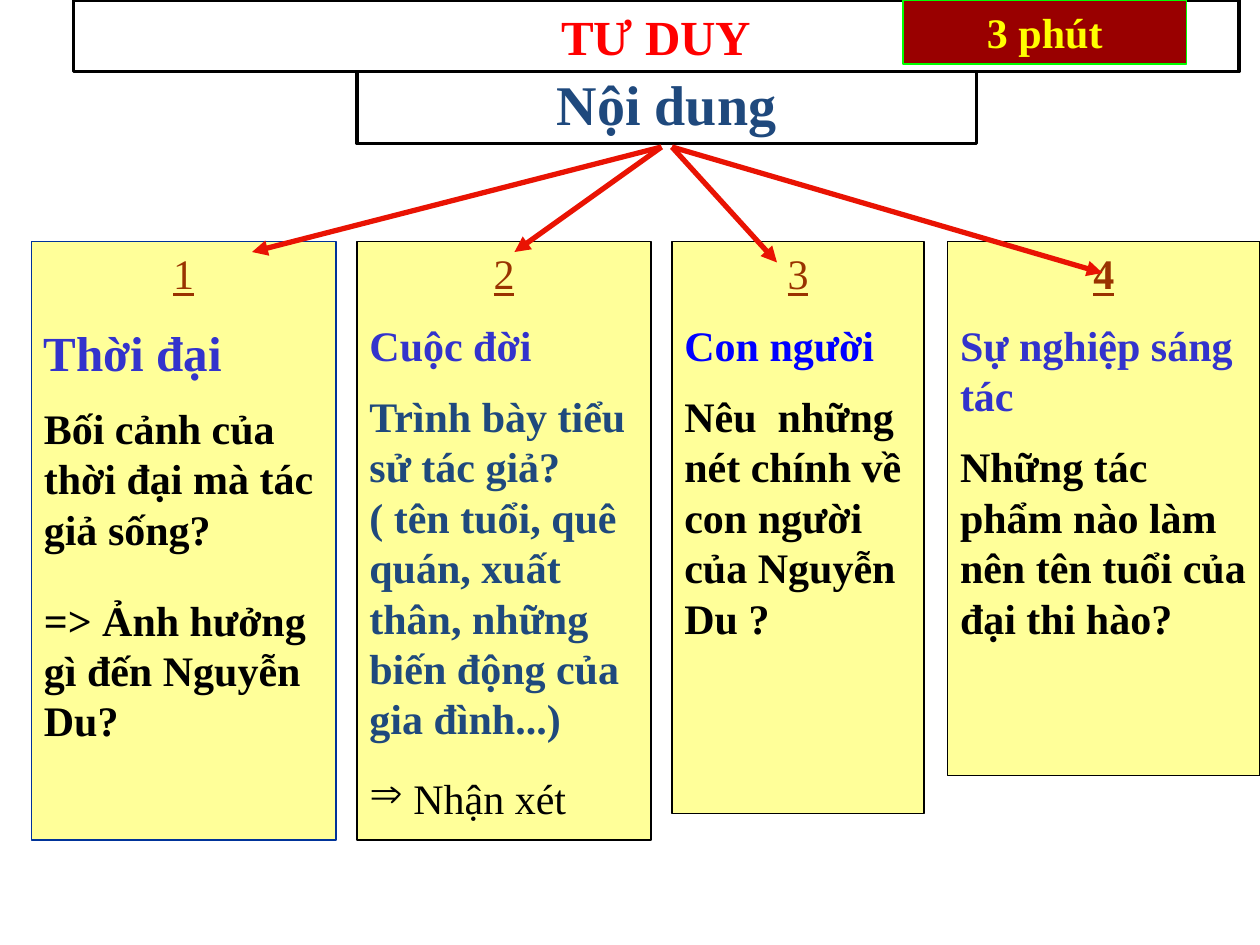
from lxml.etree import SubElement
from pptx import Presentation
from pptx.dml.color import RGBColor
from pptx.enum.shapes import MSO_CONNECTOR, MSO_SHAPE
from pptx.enum.text import MSO_ANCHOR, PP_ALIGN
from pptx.oxml.ns import qn
from pptx.util import Pt

THEME = {
    "font": "Times New Roman",
    "body": 24, "heading": 28, "subject": 32,
    "black": "000000", "white": "FFFFFF", "panel": "FFFF99",
    "number": "993300", "violet": "3333CC", "blue": "0000FF",
    "navy": "1F497D", "edge": "003399", "red": "FF0000",
    "arrow": "E91303", "timer": "990000", "lime": "00FF00", "yellow": "FFFF00",
}
COLUMN_TOP = 138

# left, width, height, edge colour, number is bold, heading (text, size, colour), question (text, colour)
COLUMNS = [
    (18, 174, 342, "edge", False, ("Thời đại", "heading", "violet"),
     ("Bối cảnh của thời đại mà tác giả sống?", "black")),
    (204, 168, 342, "black", False, ("Cuộc đời", "body", "violet"),
     ("Trình bày tiểu sử tác giả? ( tên tuổi, quê quán, xuất thân, "
      "những biến động của gia đình...)", "navy")),
    (384, 144, 327, "black", False, ("Con người", "body", "blue"),
     ("Nêu  những  nét chính về con người của Nguyễn Du ?", "black")),
    (541.5, 178.5, 305, "black", True, ("Sự nghiệp sáng tác", "body", "violet"),
     ("Những tác phẩm nào làm nên tên tuổi của đại thi hào?", "black")),
]
ARROWS = [  # start, end
    ((378, 84), (144, 144)),
    ((378, 84), (294, 144)),
    ((384, 84), (444, 150)),
    ((384, 84), (630, 156)),
]
SUBJECT = ("Nội dung", "subject", "navy", (204, 36, 354, 46), "white", "black", 2)
BANNERS = [  # text, size, colour, frame, fill, edge, edge width
    ("TƯ DUY", "heading", "red", (42, 0, 666, 41), "white", "black", 2),
    ("3 phút", "body", "yellow", (516, 0, 162, 36.5), "timer", "lime", 1),
]
FOLLOW_UP = ("=> Ảnh hưởng gì đến Nguyễn Du?", (18, 336, 180, 94))
REMARK = (" Nhận xét", "⇒", (204, 438, 162, 37))


def color(name):
    return RGBColor.from_string(THEME[name])


def add_box(slide, frame, fill, edge, edge_width):
    shape = slide.shapes.add_shape(MSO_SHAPE.RECTANGLE, *map(Pt, frame))
    shape.shadow.inherit = False
    shape.fill.solid()
    shape.fill.fore_color.rgb = color(fill)
    shape.line.color.rgb = color(edge)
    shape.line.width = Pt(edge_width)
    return shape


def write(shape, lines):
    """Fill a shape with (text, size, colour, bold, underline, alignment) paragraphs."""
    text_frame = shape.text_frame
    text_frame.word_wrap = True
    text_frame.vertical_anchor = MSO_ANCHOR.TOP
    for index, (text, size, tint, bold, underline, alignment) in enumerate(lines):
        paragraph = text_frame.add_paragraph() if index else text_frame.paragraphs[0]
        paragraph.alignment = alignment
        paragraph.space_before = Pt(THEME[size] / 2 if index else 0)
        run = paragraph.add_run()
        run.text = text
        run.font.name = THEME["font"]
        run.font.size = Pt(THEME[size])
        run.font.color.rgb = color(tint)
        run.font.bold = bold
        run.font.underline = underline


def add_column(slide, number, column):
    left, width, height, edge, bold, heading, (question, tint) = column
    shape = add_box(slide, (left, COLUMN_TOP, width, height), "panel", edge, 0.75)
    write(shape, [
        (str(number), "body", "number", bold, True, PP_ALIGN.CENTER),
        (*heading, True, False, PP_ALIGN.LEFT),
        (question, "body", tint, True, False, PP_ALIGN.LEFT),
    ])


def add_banner(slide, text, size, tint, frame, fill, edge, edge_width):
    shape = add_box(slide, frame, fill, edge, edge_width)
    write(shape, [(text, size, tint, True, False, PP_ALIGN.CENTER)])


def add_note(slide, text, frame, bold):
    shape = slide.shapes.add_textbox(*map(Pt, frame))
    write(shape, [(text, "body", "black", bold, False, PP_ALIGN.LEFT)])
    return shape.text_frame.paragraphs[0]


def add_arrow(slide, start, end):
    connector = slide.shapes.add_connector(
        MSO_CONNECTOR.STRAIGHT, *map(Pt, start + end))
    connector.line.color.rgb = color("arrow")
    connector.line.width = Pt(3)
    SubElement(connector.line._get_or_add_ln(), qn("a:tailEnd"), type="triangle")
    SubElement(connector._element.spPr, qn("a:effectLst"))


def main():
    presentation = Presentation()
    presentation.slide_width, presentation.slide_height = Pt(720), Pt(540)
    slide = presentation.slides.add_slide(presentation.slide_layouts[6])

    for number, column in enumerate(COLUMNS, 1):
        add_column(slide, number, column)
    add_banner(slide, *SUBJECT)
    for start, end in ARROWS:
        add_arrow(slide, start, end)

    add_note(slide, *FOLLOW_UP, bold=True)
    text, bullet, frame = REMARK
    remark = add_note(slide, text, frame, bold=False)
    SubElement(remark._p.get_or_add_pPr(), qn("a:buChar"), char=bullet)

    for banner in BANNERS:
        add_banner(slide, *banner)
    presentation.save("out.pptx")


if __name__ == "__main__":
    main()
